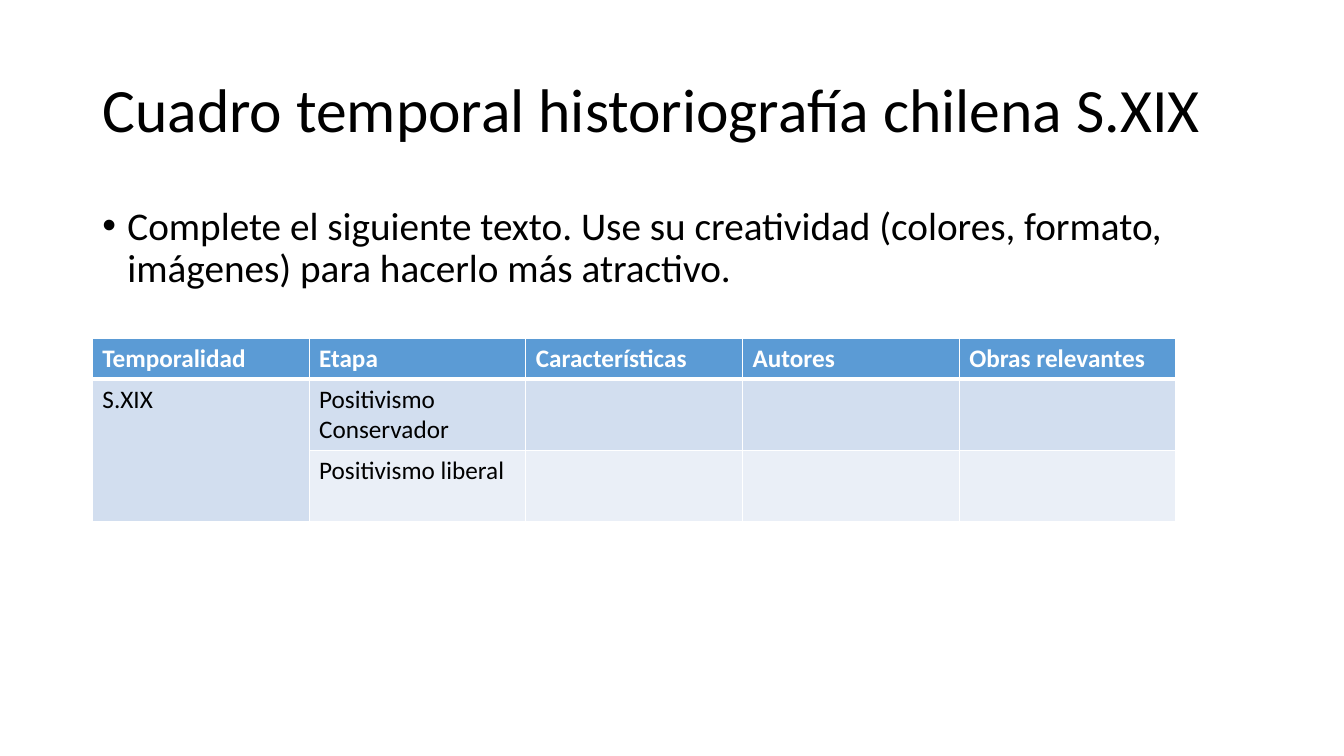
from dataclasses import dataclass

from lxml import etree
from pptx import Presentation
from pptx import util as u
from pptx.dml.color import RGBColor
from pptx.enum import text
from pptx.oxml.ns import qn

PX = 9525


@dataclass(frozen=True)
class Theme:
    """Colours, font and type sizes of the slide."""
    font: str = "Calibri"
    ink: str = "000000"
    paper: str = "FFFFFF"
    header: str = "5B9BD5"
    bands: tuple = ("D2DEEF", "EAEFF7")
    title_size: int = 44
    body_size: int = 28
    table_size: int = 18


THEME = Theme()
HEADINGS = ["Temporalidad", "Etapa", "Características", "Autores", "Obras relevantes"]
STAGES = [["S.XIX", "Positivismo\nConservador"], ["", "Positivismo liberal"]]
ROW_HEIGHTS = [39, 68, 68]


def px(*lengths):
    """Turn px lengths into EMU."""
    return [u.Emu(length * PX) for length in lengths]


def style(paragraph, size, color, bold=False):
    """Set the font and left alignment of a paragraph."""
    paragraph.alignment = text.PP_ALIGN.LEFT
    font = paragraph.font
    font.name, font.size, font.bold = THEME.font, u.Pt(size), bold
    font.color.rgb = RGBColor.from_string(color)


def add_title(slide, box, wording):
    """Place the slide title in its box."""
    title = slide.shapes.title
    title.left, title.top, title.width, title.height = px(*box)
    frame = title.text_frame
    frame.text = wording
    frame.auto_size = text.MSO_AUTO_SIZE.NONE
    frame.vertical_anchor = text.MSO_ANCHOR.MIDDLE
    frame.paragraphs[0].line_spacing = 0.9
    style(frame.paragraphs[0], THEME.title_size, THEME.ink)


def add_instruction(slide, box, wording):
    """Place the bulleted instruction in its box."""
    frame = slide.shapes.add_textbox(*px(*box)).text_frame
    frame.word_wrap = True
    instruction = frame.paragraphs[0]
    instruction.text = wording
    instruction.line_spacing = 0.9
    instruction.space_before = u.Pt(10)
    style(instruction, THEME.body_size, THEME.ink)
    properties = instruction._p.get_or_add_pPr()
    properties.set("marL", str(24 * PX))
    properties.set("indent", str(-24 * PX))
    bullet_font = etree.Element(qn("a:buFont"), typeface="Arial")
    bullet = etree.Element(qn("a:buChar"), char="•")
    spacing = properties.find(qn("a:spcBef"))
    spacing.addnext(bullet_font)
    bullet_font.addnext(bullet)


def set_borders(cell, widths):
    """Draw the cell's left, right, top and bottom borders with widths in points."""
    properties = cell._tc.get_or_add_tcPr()
    for index, (side, width) in enumerate(zip("LRTB", widths)):
        line = etree.Element(qn(f"a:ln{side}"), w=str(u.Pt(width)))
        fill = etree.SubElement(line, qn("a:solidFill"))
        etree.SubElement(fill, qn("a:srgbClr"), val=THEME.paper)
        properties.insert(index, line)


def fill_cell(cell, wording, row):
    """Write and format one cell according to its row."""
    is_header = row == 0
    cell.text = wording
    cell.fill.solid()
    background = THEME.header if is_header else THEME.bands[row - 1]
    cell.fill.fore_color.rgb = RGBColor.from_string(background)
    for paragraph in cell.text_frame.paragraphs:
        style(paragraph, THEME.table_size, THEME.paper if is_header else THEME.ink, is_header)
    set_borders(cell, (1, 1, 3 if row == 1 else 1, 3 if is_header else 1))


def add_timeline(slide, box):
    """Place the table of periods and stages in its box."""
    columns = len(HEADINGS)
    table = slide.shapes.add_table(len(ROW_HEIGHTS), columns, *px(*box)).table
    for column in table.columns:
        column.width = u.Emu(box[2] * PX // columns)
    for row, (height, wordings) in enumerate(zip(ROW_HEIGHTS, [HEADINGS] + STAGES)):
        table.rows[row].height = px(height)[0]
        for column in range(columns):
            wording = wordings[column] if column < len(wordings) else ""
            fill_cell(table.cell(row, column), wording, row)
    table.cell(1, 0).merge(table.cell(2, 0))


def main():
    """Build and save the slide."""
    deck = Presentation()
    deck.slide_width, deck.slide_height = px(1280, 720)
    slide = deck.slides.add_slide(deck.slide_layouts[5])
    add_title(slide, (88, 38, 1104, 139), "Cuadro temporal historiografía chilena S.XIX")
    add_instruction(
        slide, (88, 192, 1104, 457),
        "Complete el siguiente texto. Use su creatividad (colores, formato, imágenes) "
        "para hacerlo más atractivo.")
    add_timeline(slide, (88, 322, 1032, sum(ROW_HEIGHTS)))
    deck.save("out.pptx")


if __name__ == "__main__":
    main()
